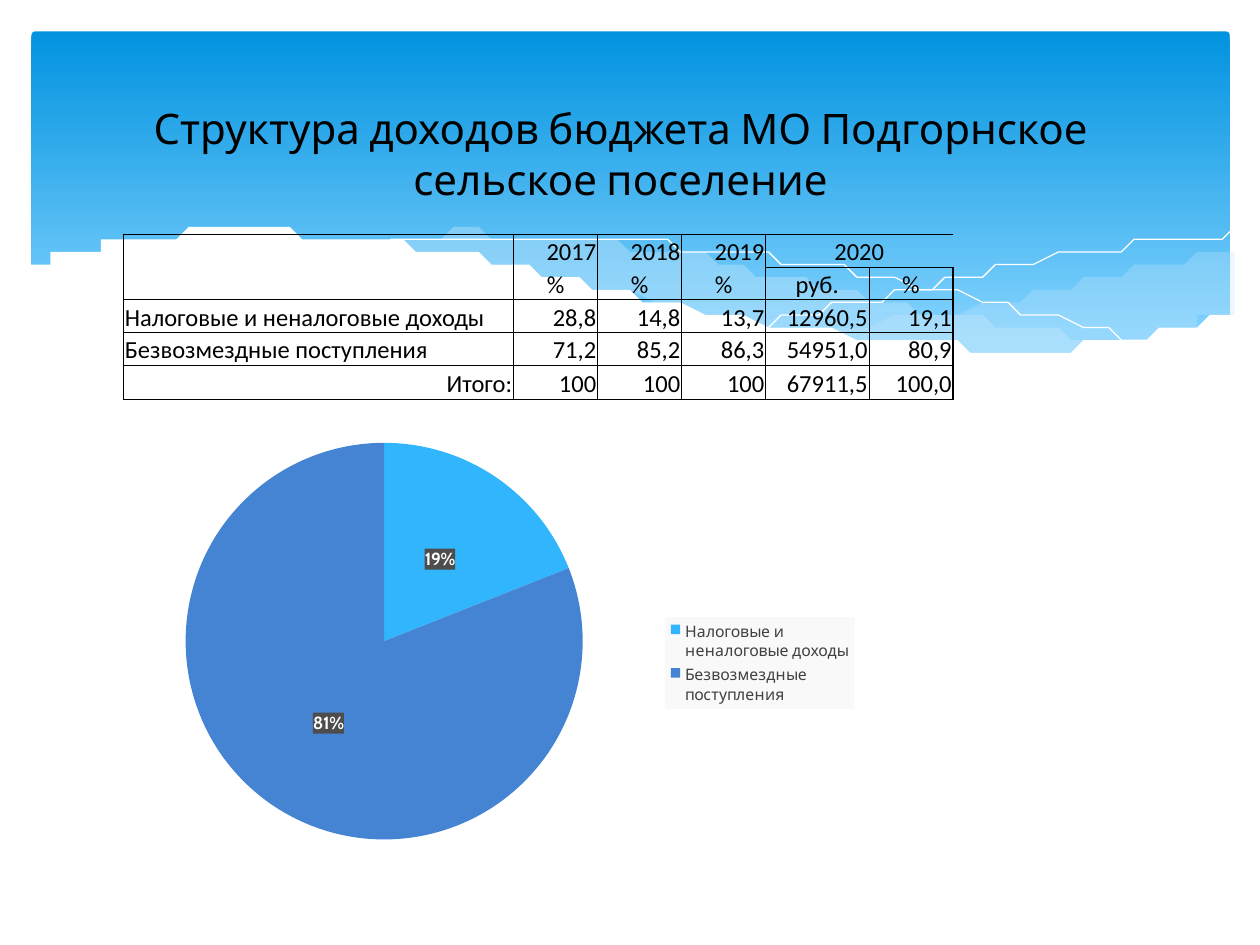
import pptx
import pptx.util
import pptx.oxml
import pptx.oxml.ns
import pptx.chart.data
import pptx.dml.color
import pptx.enum.chart
import pptx.enum.shapes
import pptx.enum.text
from dataclasses import dataclass

Pt = pptx.util.Pt
qn = pptx.oxml.ns.qn
SPACE = pptx.oxml.ns.nsdecls("a", "c")


@dataclass
class Theme:
    head: str = "Cabin"
    body: str = "Calibri"
    big: int = 24
    cell: int = 14
    label: int = 10
    key: int = 9
    ink: str = "000000"
    paper: str = "FFFFFF"
    top: str = "0293E0"
    base: str = "83D3FE"
    wave: str = "C6E7FC"
    grey: str = "404040"
    badge: str = "4D4D4D"
    pale: str = "F9F9F9"
    slices: tuple = ("31B6FD", "4584D3")


def rgb(code):
    return pptx.dml.color.RGBColor.from_string(code)


def xml(text):
    return pptx.oxml.parse_xml(text)


def solid(code):
    return f'<a:solidFill><a:srgbClr val="{code}"/></a:solidFill>'


def smooth(knots, steps=6):
    ends = [knots[0], *knots, knots[-1]]
    points = []
    for a, b, c, d in zip(ends, ends[1:], ends[2:], ends[3:]):
        for i in range(steps):
            t = i / steps
            points.append(tuple(
                q + t * (r - p) / 2 + t * t * (2 * p - 5 * q + 4 * r - s) / 2
                + t ** 3 * (3 * q - p - 3 * r + s) / 2
                for p, q, r, s in zip(a, b, c, d)))
    return points + [knots[-1]]


class Deck:
    def __init__(self, theme, cols=100, rows=75):
        self.theme = theme
        self.file = pptx.Presentation()
        self.file.slide_width = pptx.util.Inches(10)
        self.file.slide_height = pptx.util.Inches(7.5)
        self.dx = self.file.slide_width / cols
        self.dy = self.file.slide_height / rows
        self.slide = self.file.slides.add_slide(self.file.slide_layouts[5])
        self.shapes = self.slide.shapes

    def box(self, x, y, w, h):
        return int(x * self.dx), int(y * self.dy), int(w * self.dx), int(h * self.dy)

    def font(self, font, name, size, code, bold=False):
        font.name, font.size, font.bold = name, Pt(size), bold
        font.color.rgb = rgb(code)

    def banner(self, *box):
        shape = self.shapes.add_shape(
            pptx.enum.shapes.MSO_SHAPE.ROUNDED_RECTANGLE, *self.box(*box))
        shape.adjustments[0] = 0.01
        shape.shadow.inherit = False
        shape.line.fill.background()
        shape.fill.gradient()
        shape.fill.gradient_angle = 270
        stops = shape.fill.gradient_stops
        for stop, place, code in zip(stops, (0, 0.9), (self.theme.top, self.theme.base)):
            stop.position = place
            stop.color.rgb = rgb(code)

    def curve(self, points, code=None, alpha=100):
        pen = self.shapes.build_freeform(
            *points[0], scale=(self.dx, self.dy))
        pen.add_line_segments(points[1:], close=code is not None)
        shape = pen.convert_to_shape()
        shape.shadow.inherit = False
        if code:
            shape.line.fill.background()
            shape.fill.solid()
            shape.fill.fore_color.rgb = rgb(code)
            tint = shape._element.spPr.find(".//" + qn("a:srgbClr"))
            tint.append(xml(f'<a:alpha {SPACE} val="{alpha * 1000}"/>'))
        else:
            shape.fill.background()
            shape.line.color.rgb = rgb(self.theme.paper)
            shape.line.width = Pt(0)

    def title(self, text, *box):
        shape = self.shapes.title
        shape.left, shape.top, shape.width, shape.height = self.box(*box)
        frame = shape.text_frame
        frame.text = text
        frame.word_wrap = True
        frame.auto_size = pptx.enum.text.MSO_AUTO_SIZE.SHAPE_TO_FIT_TEXT
        frame.vertical_anchor = pptx.enum.text.MSO_ANCHOR.MIDDLE
        line = frame.paragraphs[0]
        line.alignment = pptx.enum.text.PP_ALIGN.CENTER
        self.font(line.font, self.theme.head, self.theme.big, self.theme.ink)
        shape._element.getparent().append(shape._element)

    def edges(self, cell, widths):
        prop = cell._tc.get_or_add_tcPr()
        for i, (side, width) in enumerate(zip("LRTB", widths)):
            fill = solid(self.theme.ink) if width else "<a:noFill/>"
            prop.insert(i, xml(
                f'<a:ln{side} {SPACE} w="{int(Pt(width))}">{fill}</a:ln{side}>'))

    def table(self, left, top, cols, rows, data, aligns, spans, bold, gaps):
        frame = self.shapes.add_table(
            len(rows), len(cols), *self.box(left, top, sum(cols), sum(rows)))
        grid = frame.table
        grid.first_row = grid.horz_banding = False
        for col, size in zip(grid.columns, cols):
            col.width = int(size * self.dx)
        for row, size in zip(grid.rows, rows):
            row.height = int(size * self.dy)
        for start, end in spans:
            grid.cell(*start).merge(grid.cell(*end))
        for y, row in enumerate(data):
            for x, text in enumerate(row):
                cell = grid.cell(y, x)
                cell.fill.background()
                cell.margin_left = cell.margin_right = cell.margin_top = Pt(0.75)
                cell.margin_bottom = 0
                cell.vertical_anchor = pptx.enum.text.MSO_ANCHOR.BOTTOM
                if text:
                    cell.text = text
                line = cell.text_frame.paragraphs[0]
                line.alignment = getattr(
                    pptx.enum.text.PP_ALIGN, {"l": "LEFT", "r": "RIGHT", "c": "CENTER"}[aligns[y][x]])
                self.font(line.font, self.theme.body, self.theme.cell, self.theme.ink)
                sides = [("v", y, x), ("v", y, x + 1), ("h", y, x), ("h", y + 1, x)]
                self.edges(cell, [
                    0 if (way, j, i) in gaps
                    else 1 if (i in bold if way == "v" else j in (0, len(rows))) else 0.5
                    for way, j, i in sides])

    def layout(self, host, spot, x, y, w, h, inner=""):
        for old in host.findall(qn("c:layout")):
            host.remove(old)
        host.insert(spot, xml(
            f'<c:layout {SPACE}><c:manualLayout>{inner}'
            '<c:xMode val="edge"/><c:yMode val="edge"/>'
            f'<c:x val="{x}"/><c:y val="{y}"/><c:w val="{w}"/><c:h val="{h}"/>'
            '</c:manualLayout></c:layout>'))

    def back(self, host, code, line="<a:ln><a:noFill/></a:ln>"):
        for old in host.findall(qn("c:spPr")):
            host.remove(old)
        host.find(qn("c:txPr")).addprevious(
            xml(f'<c:spPr {SPACE}>{solid(code)}{line}</c:spPr>'))

    def pie(self, names, values, *box):
        look = self.theme
        data = pptx.chart.data.CategoryChartData()
        data.categories = names
        data.add_series("Series 1", values)
        chart = self.shapes.add_chart(
            pptx.enum.chart.XL_CHART_TYPE.PIE, *self.box(*box), data).chart
        chart.has_title = False
        self.font(chart.font, look.head, look.label, look.ink)
        self.back(chart._chartSpace, look.paper, f'<a:ln w="9525">{solid(look.paper)}</a:ln>')
        self.layout(chart._chartSpace.chart.plotArea, 0, 0, 0, 0.59, 0.91,
                    '<c:layoutTarget val="inner"/>')
        plot = chart.plots[0]
        plot.vary_by_categories = True
        for i, code in enumerate(look.slices):
            fill = plot.series[0].points[i].format.fill
            fill.solid()
            fill.fore_color.rgb = rgb(code)
        tags = plot.series[0].data_labels
        tags.show_percentage, tags.show_value = True, False
        tags.number_format, tags.number_format_is_linked = "0%", False
        tags.position = pptx.enum.chart.XL_LABEL_POSITION.CENTER
        self.font(tags.font, look.head, look.label, look.paper, True)
        self.back(tags._element, look.badge)
        chart.has_legend = True
        key = chart.legend
        key.position = pptx.enum.chart.XL_LEGEND_POSITION.RIGHT
        key.include_in_layout = False
        self.font(key.font, look.head, look.key, look.grey)
        self.back(key._element, look.pale)
        self.layout(key._element, 1, 0.71, 0.4, 0.28, 0.21)


def main():
    look = Theme()
    deck = Deck(look)
    deck.banner(2.5, 2.5, 95.1, 27)
    deck.curve(
        smooth([(97.6, 20), (92.1, 21), (86.1, 22.3), (77.9, 24.2), (66.1, 26.5)])
        + smooth([(66.1, 26.5), (71.9, 27.2), (76.9, 27.7), (81.4, 27.8), (86.3, 27.5),
                  (90.5, 26.9), (94.2, 25.9), (97.6, 24.7)]), look.wave, 29)
    deck.curve(
        smooth([(89.3, 27.3), (83.7, 26.5), (77.5, 25.4), (70.6, 24), (62.9, 22.2),
                (55.5, 20.5), (48.9, 19.4), (42, 18.7), (36.1, 18.5), (28.6, 19.1)])
        + smooth([(28.6, 19.1), (36.2, 20.3), (44.9, 22.2), (53, 24), (60.1, 25.5),
                  (66.5, 26.6), (72.2, 27.4), (77.3, 27.7), (81.8, 27.8), (89.3, 27.3)]),
        look.wave, 40)
    deck.curve(smooth([(30.9, 19.5), (36.3, 18.9), (43.3, 18.7), (51, 19.2), (60.8, 20.4),
                       (69.5, 21.9), (79.5, 24.1), (90.7, 27.2)]))
    deck.curve(smooth([(61.3, 25.7), (69.5, 23.5), (77.6, 21.6), (86.6, 19.9),
                       (92.4, 19), (97.5, 18.5)]))
    deck.curve(
        smooth([(97.7, 24.6), (93, 26.2), (87.5, 27.3), (80.9, 27.7), (72.6, 27.2),
                (62.6, 25.8), (52.9, 23.9), (44.7, 22), (36.5, 20.2), (29.2, 19),
                (23, 18.5), (17.7, 18.4), (11.9, 18.7), (7.6, 19.5), (4.6, 20.3), (2.3, 21.3)])
        + [(2.3, 32.9), (97.7, 32.9)], look.paper)
    deck.title("Структура доходов бюджета МО Подгорнское сельское поселение",
               7.5, 7.6, 83.5, 9.1)
    names = ["Налоговые и неналоговые доходы", "Безвозмездные поступления"]
    deck.table(
        9.8, 18.6, [30.96, 6.67, 6.67, 6.67, 8.2, 6.67], [2.6, 2.6, 2.6, 2.6, 2.7],
        [["", "2017", "2018", "2019", "2020", ""],
         ["", "%", "%", "%", "руб.", "%"],
         [names[0], "28,8", "14,8", "13,7", "12960,5", "19,1"],
         [names[1], "71,2", "85,2", "86,3", "54951,0", "80,9"],
         ["Итого:", "100", "100", "100", "67911,5", "100,0"]],
        ["lrrrcc", "lccccc", "lrrrrr", "lrrrrr", "rrrrrr"],
        [((0, 0), (1, 0)), ((0, 4), (0, 5))], (0, 1, 4, 6),
        {("h", 1, x) for x in range(4)} | {("v", 0, 5)})
    deck.pie(names, (19, 81), 14.6, 35.1, 53.8, 34.7)
    deck.file.save("out.pptx")


if __name__ == "__main__":
    main()
